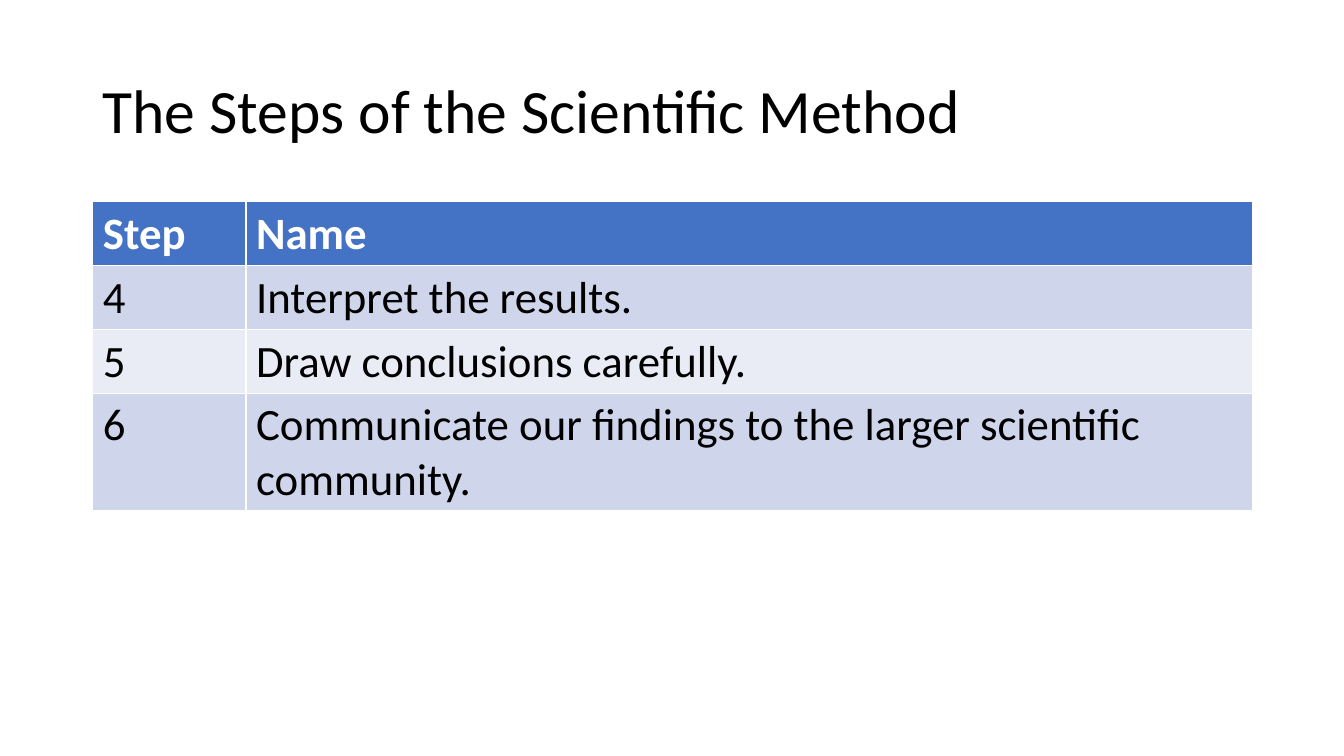
from dataclasses import dataclass

from pptx import Presentation
from pptx.dml.color import RGBColor
from pptx.enum.text import MSO_ANCHOR
from pptx.util import Inches, Pt


@dataclass(frozen=True)
class Theme:
    font: str = "Calibri"
    title_size: int = 44
    table_size: int = 32
    text: str = "000000"
    header_text: str = "FFFFFF"
    header_fill: str = "4472C4"
    band_fills: tuple = ("CFD5EA", "E9EBF5")


class SlideBuilder:
    """Draws styled elements on one slide, placed in inches on its margins."""

    def __init__(self, slide, theme):
        self.slide = slide
        self.theme = theme

    def style(self, paragraph, size, color, bold=False):
        font = paragraph.font
        font.name = self.theme.font
        font.size = Pt(size)
        font.bold = bold
        font.color.rgb = RGBColor.from_string(color)

    def title(self, text, left, top, width, height):
        shape = self.slide.shapes.add_textbox(*map(Inches, (left, top, width, height)))
        frame = shape.text_frame
        frame.word_wrap = True
        frame.vertical_anchor = MSO_ANCHOR.MIDDLE
        paragraph = frame.paragraphs[0]
        paragraph.text = text
        paragraph.line_spacing = 0.9
        self.style(paragraph, self.theme.title_size, self.theme.text)

    def table(self, rows, left, top, column_widths, row_height):
        shape = self.slide.shapes.add_table(
            len(rows), len(column_widths), Inches(left), Inches(top),
            Inches(sum(column_widths)), Inches(row_height * len(rows)))
        table = shape.table
        for column, width in zip(table.columns, column_widths):
            column.width = Inches(width)
        for row_index, row in enumerate(rows):
            for column_index, text in enumerate(row):
                self.cell(table.cell(row_index, column_index), text, row_index)

    def cell(self, cell, text, row_index):
        theme = self.theme
        is_header = row_index == 0
        fill = theme.header_fill if is_header else theme.band_fills[(row_index - 1) % 2]
        cell.fill.solid()
        cell.fill.fore_color.rgb = RGBColor.from_string(fill)
        paragraph = cell.text_frame.paragraphs[0]
        paragraph.text = text
        color = theme.header_text if is_header else theme.text
        self.style(paragraph, theme.table_size, color, is_header)


def main():
    presentation = Presentation()
    presentation.slide_width = Inches(13.33)
    presentation.slide_height = Inches(7.5)
    slide = presentation.slides.add_slide(presentation.slide_layouts[6])
    builder = SlideBuilder(slide, Theme())

    margin = 0.92
    column_widths = (1.52, 9.98)
    builder.title("The Steps of the Scientific Method", margin, 0.4, sum(column_widths), 1.45)
    steps = [
        ("Step", "Name"),
        ("4", "Interpret the results."),
        ("5", "Draw conclusions carefully."),
        ("6", "Communicate our findings to the larger scientific community."),
    ]
    builder.table(steps, margin, 2, column_widths, row_height=0.41)
    presentation.save("out.pptx")


if __name__ == "__main__":
    main()
